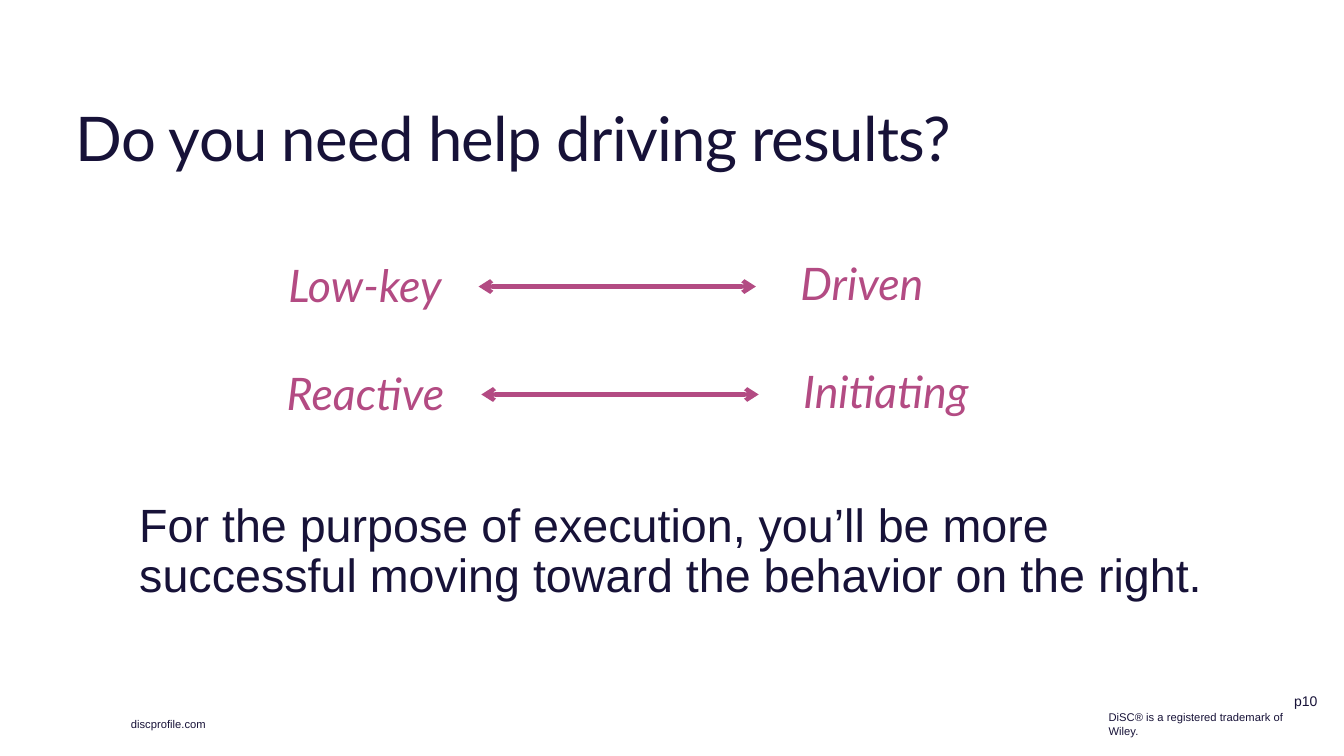
from lxml import etree
from pptx import Presentation
from pptx.dml.color import RGBColor
from pptx.enum import shapes, text
from pptx.oxml import ns
from pptx.util import Cm, Pt

NAVY = "171238"
PINK = "B34B83"


def color(hex_code):
    return RGBColor.from_string(hex_code)


def add_text(slide, content, left, top, width, height, *, size, font="Arial",
             fill=NAVY, italic=False, align="LEFT", anchor="TOP", inset=0.25,
             line=1.0, after=0, tracking=0):
    box = slide.shapes.add_textbox(Cm(left), Cm(top), Cm(width), Cm(height))
    frame = box.text_frame
    frame.word_wrap = True
    frame.vertical_anchor = getattr(text.MSO_ANCHOR, anchor)
    frame.margin_left = frame.margin_right = Cm(inset)
    paragraph = frame.paragraphs[0]
    paragraph.alignment = getattr(text.PP_ALIGN, align)
    paragraph.line_spacing = line
    paragraph.space_after = Pt(after)
    run = paragraph.add_run()
    run.text = content
    run.font.name = font
    run.font.size = Pt(size)
    run.font.italic = italic
    run.font.color.rgb = color(fill)
    if tracking:
        run.font._element.set("spc", str(tracking))


def add_double_arrow(slide, left, right, y):
    arrow = slide.shapes.add_connector(
        shapes.MSO_CONNECTOR.STRAIGHT, Cm(left), Cm(y), Cm(right), Cm(y))
    arrow.line.color.rgb = color(PINK)
    arrow.line.width = Pt(3)
    stroke = arrow.line._get_or_add_ln()
    for end in ("a:headEnd", "a:tailEnd"):
        etree.SubElement(stroke, ns.qn(end), type="arrow")
    etree.SubElement(arrow._element.spPr, ns.qn("a:effectLst"))


def add_scale(slide, low, high, shift, top):
    style = dict(size=32, font="Lato", fill=PINK, italic=True, inset=0,
                 line=0.9, after=2)
    add_text(slide, low, 3.43 + shift, top + 0.05, 7.7, 2.24, align="RIGHT", **style)
    add_double_arrow(slide, 12.06 + shift, 19.05 + shift, top + 0.74)
    add_text(slide, high, 20.17 + shift, top, 8.59, 2.24, **style)


def add_footer(slide):
    add_text(slide, "DiSC® is a registered trademark of Wiley.",
             27.69, 17.96, 5.69, 0.58, size=8, anchor="MIDDLE")
    add_text(slide, "discprofile.com", 3.05, 17.96, 2.49, 0.58, size=8, anchor="MIDDLE")
    add_text(slide, "p10", 32.05, 17.32, 1.4, 0.69, size=10, align="RIGHT", anchor="MIDDLE")


def main():
    deck = Presentation()
    deck.slide_width, deck.slide_height = Cm(33.87), Cm(19.05)
    slide = deck.slides.add_slide(deck.slide_layouts[6])

    add_footer(slide)
    add_text(slide, "Do you need help driving results?", 1.65, 2.26, 29.77, 2.24,
             size=44, font="Lato", anchor="BOTTOM", line=0.85, tracking=-50)
    add_text(slide,
             "For the purpose of execution, you’ll be more successful moving "
             "toward the behavior on the right.",
             3.51, 12.52, 27.38, 3.61, size=33.3, inset=0, line=0.9, after=2)

    scales = [("Low-key", "Driven"), ("Reactive", "Initiating")]
    for row, (low, high) in enumerate(scales):
        add_scale(slide, low, high, row * 0.07, 6.48 + row * 2.72)

    deck.save("out.pptx")


if __name__ == "__main__":
    main()
